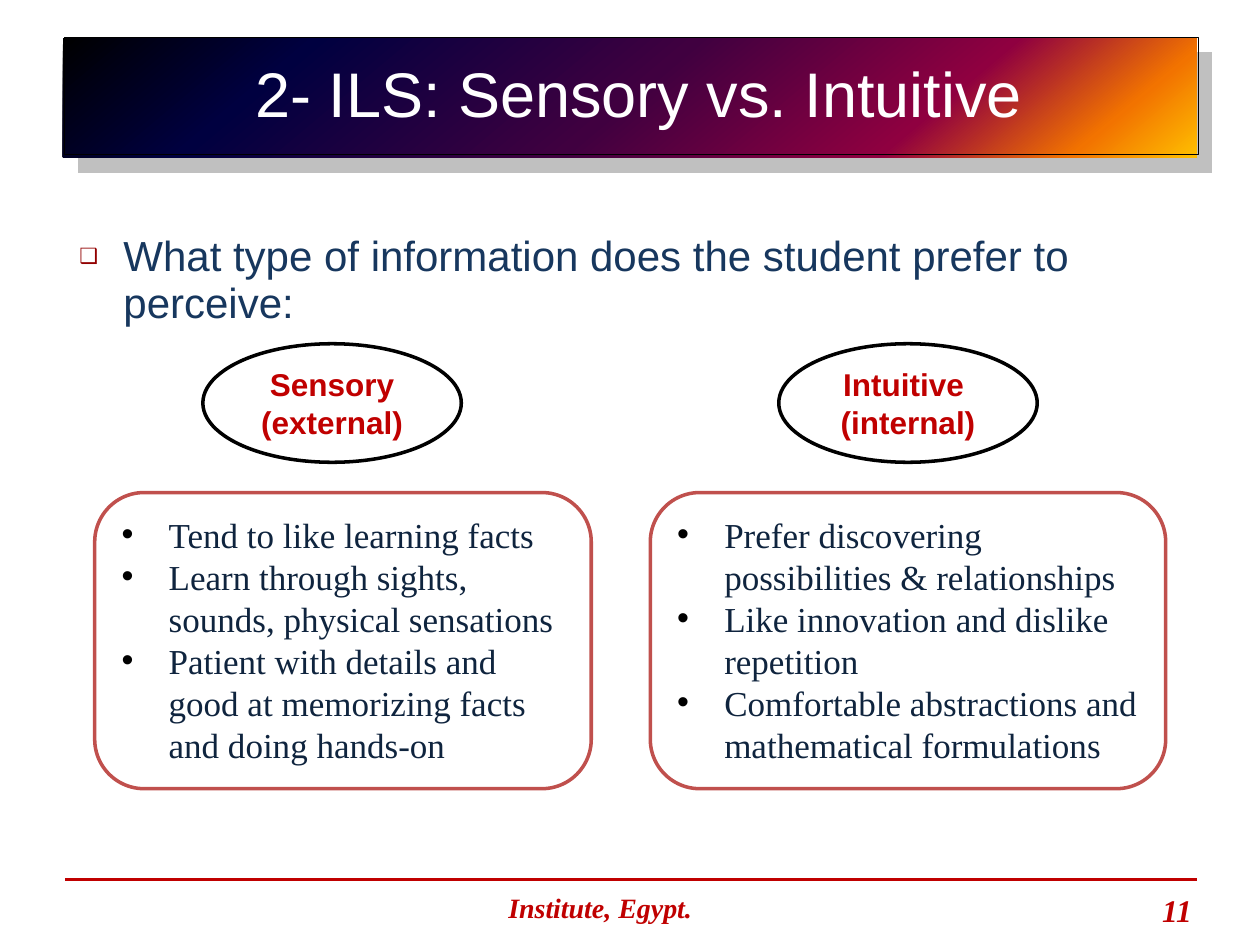
from lxml.etree import SubElement
from pptx import Presentation
from pptx.dml.color import RGBColor
from pptx.enum.shapes import MSO_CONNECTOR, MSO_SHAPE
from pptx.enum.text import MSO_ANCHOR, MSO_AUTO_SIZE, PP_ALIGN
from pptx.oxml.ns import qn
from pptx.util import Cm, Pt

COLORS = {
    "white": "FFFFFF", "black": "000000", "red": "C00000", "panel": "C0504D",
    "question": "17375E", "body": "0F243E", "marker": "920000", "shadow": "C0C0C0",
}
BANNER_STOPS = [(0, "000000"), (20, "000040"), (50, "400040"),
                (75, "8F0040"), (90, "F27300"), (100, "FFBF00")]
STYLES = [
    {"name": ["Sensory", "(external)"], "oval_left": 4.09, "left": 1.91, "width": 10.01,
     "traits": ["Tend to like learning facts",
                "Learn through sights, sounds, physical sensations",
                "Patient with details and good at memorizing facts and doing hands-on"]},
    {"name": ["Intuitive ", "(internal)"], "oval_left": 15.7, "left": 13.11, "width": 10.39,
     "traits": ["Prefer discovering possibilities & relationships",
                "Like innovation and dislike repetition",
                "Comfortable abstractions and mathematical formulations"]},
]


def rgb(name):
    """Return the named colour."""
    return RGBColor.from_string(COLORS[name])


def add_node(parent, tag, **attributes):
    """Append a DrawingML element with the given attributes."""
    return SubElement(parent, qn(tag), {key: str(value) for key, value in attributes.items()})


def add_bullet(properties, char, color, percent):
    """Give paragraph properties a coloured bullet."""
    add_node(add_node(properties, "a:buClr"), "a:srgbClr", val=COLORS[color])
    add_node(properties, "a:buSzPct", val=percent * 1000)
    add_node(properties, "a:buFont", typeface="Arial")
    add_node(properties, "a:buChar", char=char)


def write_text(box, lines, size, color, font="Arial", bold=False, italic=False,
               align=PP_ALIGN.LEFT, anchor=MSO_ANCHOR.TOP, wrap=True, inset=True,
               spacing=None, after=None, margin=0, indent=0, bullet=None):
    """Fill a shape with formatted paragraphs, one for each line."""
    frame = box.text_frame
    frame.auto_size = MSO_AUTO_SIZE.NONE
    frame.word_wrap = wrap
    frame.vertical_anchor = anchor
    if not inset:
        frame.margin_left = frame.margin_right = frame.margin_top = frame.margin_bottom = 0
    for number, line in enumerate(lines):
        para = frame.add_paragraph() if number else frame.paragraphs[0]
        para.alignment = align
        para.line_spacing = spacing
        if after is not None:
            para.space_after = Pt(after)
        properties = para._p.get_or_add_pPr()
        properties.set("marL", str(Cm(margin)))
        properties.set("indent", str(Cm(indent)))
        if bullet:
            add_bullet(properties, *bullet)
        span = para.add_run()
        span.text = line
        span.font.name = font
        span.font.size = Pt(size)
        span.font.bold = bold
        span.font.italic = italic
        span.font.color.rgb = rgb(color)


def add_outlined(page, kind, left, top, width, height, line):
    """Add a white preset shape with a coloured outline."""
    shape = page.shapes.add_shape(kind, Cm(left), Cm(top), Cm(width), Cm(height))
    shape.shadow.inherit = False
    shape.fill.solid()
    shape.fill.fore_color.rgb = rgb("white")
    shape.line.color.rgb = rgb(line)
    shape.line.width = Pt(2)
    return shape


def add_text_box(page, left, top, width, height, line, **formatting):
    """Add a text box without inner margins."""
    box = page.shapes.add_textbox(Cm(left), Cm(top), Cm(width), Cm(height))
    write_text(box, [line], inset=False, **formatting)
    return box


def add_banner(page):
    """Add the gradient banner with its hard shadow behind the title."""
    banner = page.shapes.add_shape(MSO_SHAPE.RECTANGLE, Cm(1.27), Cm(0.76), Cm(22.86), Cm(2.41))
    banner.line.fill.background()
    banner.shadow.inherit = False
    banner.fill.gradient()
    gradient = banner.element.spPr.find(qn("a:gradFill"))
    for child in list(gradient):
        gradient.remove(child)
    stops = add_node(gradient, "a:gsLst")
    for position, color in BANNER_STOPS:
        add_node(add_node(stops, "a:gs", pos=position * 1000), "a:srgbClr", val=color)
    add_node(gradient, "a:lin", ang=50 * 60000, scaled=0)
    effects = banner.element.spPr.find(qn("a:effectLst"))
    shadow = add_node(effects, "a:outerShdw", blurRad=0, dist=Pt(12.2),
                      dir=45 * 60000, algn="ctr", rotWithShape=0)
    add_node(shadow, "a:srgbClr", val=COLORS["shadow"])
    page.shapes.title.element.addprevious(banner.element)


def add_title(page, text):
    """Place and format the title placeholder."""
    title = page.shapes.title
    title.left, title.top, title.width, title.height = Cm(1.3), Cm(0.76), Cm(22.86), Cm(2.36)
    title.line.color.rgb = rgb("black")
    title.line.width = Pt(0.5)
    write_text(title, [text], 36, "white", align=PP_ALIGN.CENTER, anchor=MSO_ANCHOR.MIDDLE,
               wrap=False, inset=False, spacing=0.93, after=14.2, margin=0.3)


def add_question(page, text):
    """Add the leading question on a white body area."""
    box = add_text_box(page, 1.3, 4.72, 22.81, 12.4, text, size=24, color="question",
                       spacing=0.93, after=14.2, margin=1.19, indent=-0.89,
                       bullet=("❑", "marker", 50))
    box.fill.solid()
    box.fill.fore_color.rgb = rgb("white")


def add_style(page, name, oval_left, left, width, traits):
    """Add a learning style: its name in an oval and its traits in a panel."""
    oval = add_outlined(page, MSO_SHAPE.OVAL, oval_left, 6.93, 5.21, 2.39, "black")
    write_text(oval, name, 18, "red", bold=True, align=PP_ALIGN.CENTER,
               anchor=MSO_ANCHOR.MIDDLE, wrap=False)
    panel = add_outlined(page, MSO_SHAPE.FLOWCHART_ALTERNATE_PROCESS,
                         left, 9.93, width, 5.97, "panel")
    write_text(panel, traits, 20, "body", font="Times New Roman",
               margin=0.95, indent=-0.95, bullet=("•", "black", 97))


def add_footer(page, text, number):
    """Add the footer rule, its text and the page number."""
    rule = page.shapes.add_connector(MSO_CONNECTOR.STRAIGHT,
                                     Cm(1.32), Cm(17.73), Cm(24.13), Cm(17.73))
    rule.line.color.rgb = rgb("red")
    rule.line.width = Pt(2.25)
    add_node(rule.element.spPr, "a:effectLst")
    look = {"color": "red", "font": "Times New Roman", "bold": True,
            "italic": True, "spacing": 0.95}
    add_text_box(page, 7.49, 18.01, 9.22, 0.94, text, size=16, align=PP_ALIGN.CENTER, **look)
    add_text_box(page, 18.11, 18.01, 5.92, 0.94, number, size=18, align=PP_ALIGN.RIGHT, **look)


def main():
    """Build and save the slide."""
    deck = Presentation()
    deck.slide_width, deck.slide_height = Cm(25.4), Cm(19.05)
    page = deck.slides.add_slide(deck.slide_layouts[5])
    add_banner(page)
    add_title(page, "2- ILS: Sensory vs. Intuitive")
    add_question(page, "What type of information does the student prefer to perceive:")
    add_footer(page, "Institute, Egypt.", "11")
    for style in STYLES:
        add_style(page, **style)
    deck.save("out.pptx")


if __name__ == "__main__":
    main()
